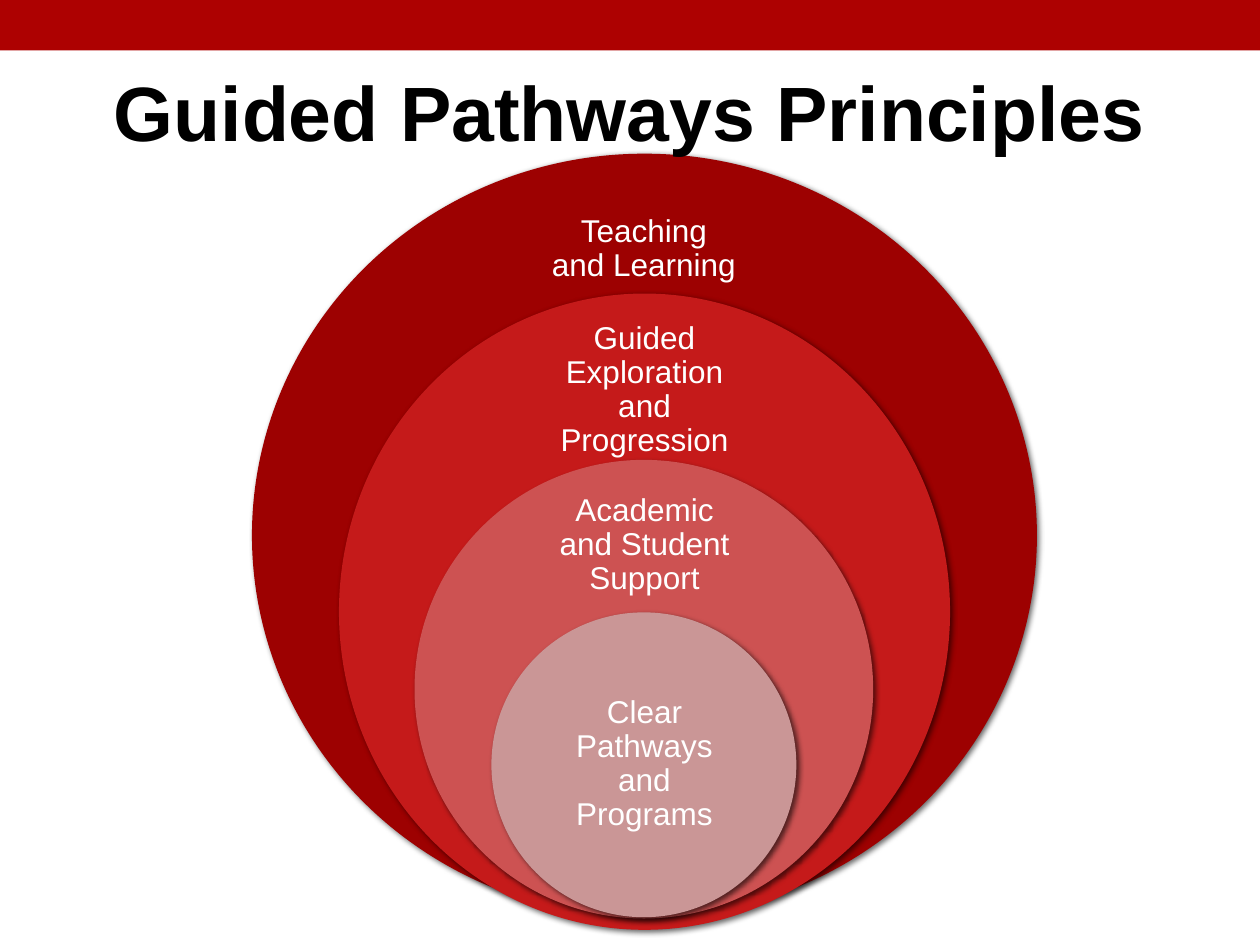
from dataclasses import dataclass

import pptx
import pptx.dml.color
import pptx.enum.shapes
import pptx.enum.text
import pptx.oxml
import pptx.oxml.ns
import pptx.util

Inches = pptx.util.Inches
Pt = pptx.util.Pt
Box = tuple[float, float, float, float]


@dataclass
class Ring:
    """One nested ellipse and the box that holds its label."""
    label: str
    color: str
    ellipse: Box
    text: Box


RINGS = [
    Ring("Teaching and Learning", "9D0101",
         (2, 1.22, 6.23, 6.06), (4.24, 1.52, 1.74, 0.91)),
    Ring("Guided Exploration and Progression", "C51A1A",
         (2.69, 2.33, 4.85, 5.05), (4.27, 2.64, 1.69, 0.91)),
    Ring("Academic and Student Support", "CD5252",
         (3.29, 3.65, 3.64, 3.64), (4.27, 3.92, 1.69, 0.82)),
    Ring("Clear Pathways and Programs", "CA9696",
         (3.9, 4.86, 2.42, 2.42), (4.26, 5.46, 1.71, 1.21)),
]


def rgb(color: str) -> pptx.dml.color.RGBColor:
    return pptx.dml.color.RGBColor.from_string(color)


def add_filled(s, kind, box: Box, color: str):
    sp = s.shapes.add_shape(kind, *map(Inches, box))
    sp.shadow.inherit = False
    sp.fill.solid()
    sp.fill.fore_color.rgb = rgb(color)
    sp.line.fill.background()
    return sp


def add_shadow(sp) -> None:
    """Soft shadow: 3 pt blur, 2 pt away, towards the lower right."""
    effects = sp.element.spPr.find(pptx.oxml.ns.qn("a:effectLst"))
    effects.append(pptx.oxml.parse_xml(
        f'<a:outerShdw {pptx.oxml.ns.nsdecls("a")} blurRad="{Pt(3)}" '
        f'dist="{Pt(2)}" dir="2700000" algn="tl" rotWithShape="0">'
        '<a:srgbClr val="000000"><a:alpha val="60000"/></a:srgbClr>'
        '</a:outerShdw>'))


def set_text(tf, text: str, size: float, color: str, bold: bool = False):
    tf.text = text
    tf.word_wrap = True
    tf.auto_size = pptx.enum.text.MSO_AUTO_SIZE.NONE
    p = tf.paragraphs[0]
    p.alignment = pptx.enum.text.PP_ALIGN.CENTER
    font = p.runs[0].font
    font.name = "Arial"
    font.size = Pt(size)
    font.bold = bold
    font.color.rgb = rgb(color)
    return p


def add_ring(s, ring: Ring) -> None:
    add_shadow(add_filled(s, pptx.enum.shapes.MSO_SHAPE.OVAL,
                          ring.ellipse, ring.color))
    tf = s.shapes.add_textbox(*map(Inches, ring.text)).text_frame
    tf.margin_left = tf.margin_right = Inches(0.14)
    tf.margin_top = tf.margin_bottom = Inches(0.14)
    tf.vertical_anchor = pptx.enum.text.MSO_ANCHOR.MIDDLE
    set_text(tf, ring.label, 18, "FFFFFF").line_spacing = 0.9


def add_title(s, text: str) -> None:
    title = s.shapes.title
    title.left, title.top, title.width, title.height = map(
        Inches, (0.5, 0.4, 9, 1.06))
    tf = title.text_frame
    tf.margin_top = Inches(0.11)
    tf.vertical_anchor = pptx.enum.text.MSO_ANCHOR.TOP
    set_text(tf, text, 44, "000000", bold=True)
    # Bring the title in front of the rings
    title.element.getparent().append(title.element)


def main() -> None:
    prs = pptx.Presentation()
    prs.slide_width, prs.slide_height = Inches(10), Inches(7.5)
    s = prs.slides.add_slide(prs.slide_layouts[5])

    # Top band
    add_filled(s, pptx.enum.shapes.MSO_SHAPE.RECTANGLE,
               (0, 0, 10, 0.4), "AD0101")

    # Nested rings, from the outside in
    for ring in RINGS:
        add_ring(s, ring)

    add_title(s, "Guided Pathways Principles")
    prs.save("out.pptx")


if __name__ == "__main__":
    main()
